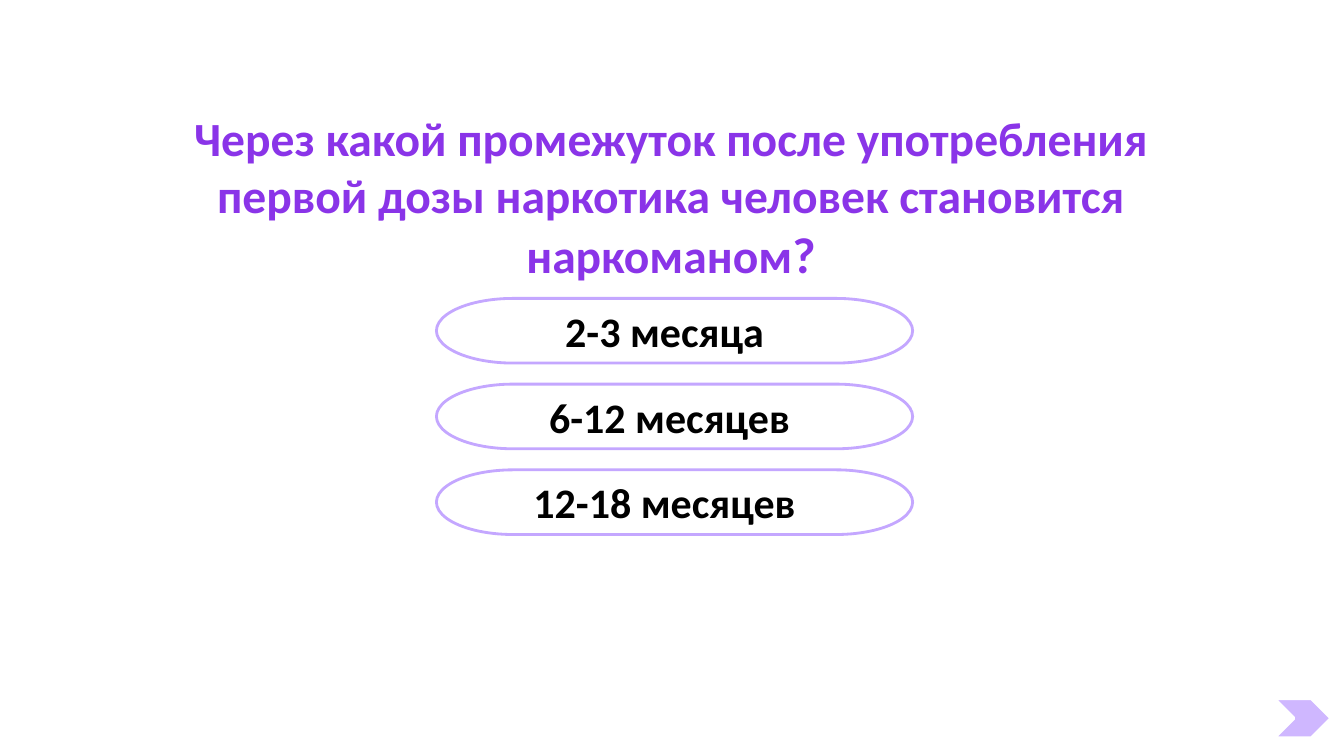
import pptx
import pptx.util
import pptx.dml.color
import pptx.enum.shapes
import pptx.enum.text

Cm = pptx.util.Cm
Pt = pptx.util.Pt
Rgb = pptx.dml.color.RGBColor.from_string
Kind = pptx.enum.shapes.MSO_SHAPE
Side = pptx.enum.text.MSO_ANCHOR
Align = pptx.enum.text.PP_ALIGN

theme = {
    "font": "Calibri",
    "title": Rgb("8A34E8"),
    "text": Rgb("000000"),
    "edge": Rgb("C4A7FF"),
    "arrow": Rgb("CFB7FF"),
    "paper": Rgb("FFFFFF"),
    "head": Pt(34),
    "mark": Pt(36),
    "body": Pt(30),
}


def write(frame, parts, color, anchor):
    frame.word_wrap = True
    frame.vertical_anchor = anchor
    para = frame.paragraphs[0]
    para.alignment = Align.CENTER
    para.line_spacing = 1.0
    for text, size in parts:
        run = para.add_run()
        run.text = text
        style = {"name": theme["font"], "size": size, "bold": True}
        for key, value in style.items():
            setattr(run.font, key, value)
        run.font.color.rgb = color


deck = pptx.Presentation()
deck.slide_width = Cm(33.87)
deck.slide_height = Cm(19.05)
slide = deck.slides.add_slide(deck.slide_layouts[5])

title = slide.shapes.title
place = {"left": Cm(4.45), "top": Cm(2.62), "width": Cm(24.92), "height": Cm(4.88)}
for key, value in place.items():
    setattr(title, key, value)
title.text_frame.auto_size = pptx.enum.text.MSO_AUTO_SIZE.NONE
question = "Через какой промежуток после употребления первой дозы наркотика человек становится наркоманом"
write(title.text_frame, [(question, theme["head"]), ("?", theme["mark"])],
      theme["title"], Side.TOP)

answers = [("2-3 месяца", 0.5), ("6-12 месяцев", 0.25), ("12-18 месяцев", 0.5)]
for row, (answer, shift) in enumerate(answers):
    pill = slide.shapes.add_shape(Kind.FLOWCHART_TERMINATOR, Cm(11),
                                  Cm(7.52 + 2.16 * row), Cm(12), Cm(1.63))
    pill.shadow.inherit = False
    pill.fill.background()
    pill.line.color.rgb = theme["edge"]
    pill.line.width = Pt(2)
    pill.text_frame.margin_right = Cm(0.25 + shift)
    write(pill.text_frame, [(answer, theme["body"])], theme["text"], Side.MIDDLE)

arrow = slide.shapes.add_shape(Kind.CHEVRON, Cm(32.1), Cm(17.6), Cm(1.45), Cm(1))
arrow.shadow.inherit = False
arrow.fill.solid()
arrow.fill.fore_color.rgb = theme["arrow"]
arrow.line.color.rgb = theme["paper"]
arrow.line.width = Pt(2.5)

deck.save("out.pptx")
